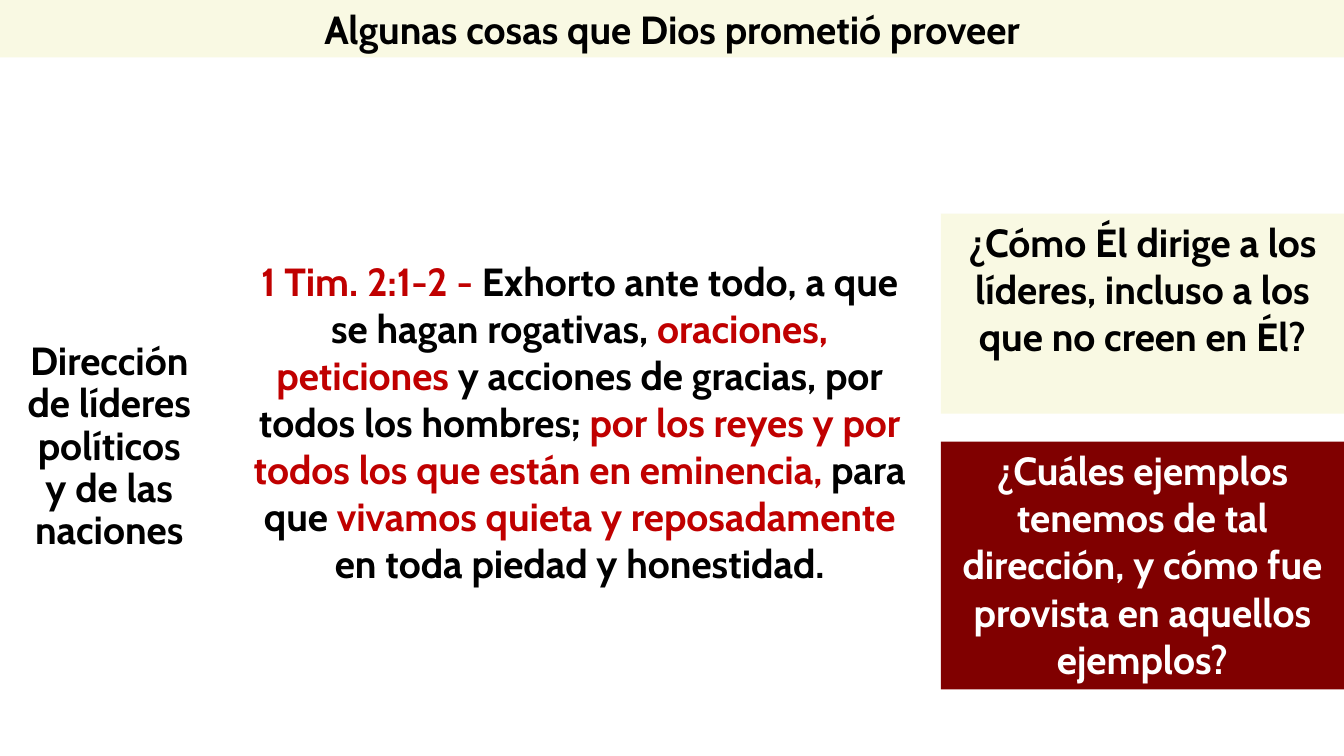
from dataclasses import dataclass

from pptx import Presentation
from pptx.dml.color import RGBColor
from pptx.enum.shapes import MSO_SHAPE
from pptx.enum.text import MSO_ANCHOR, PP_ALIGN
from pptx.util import Pt


@dataclass(frozen=True)
class Theme:
    """Colours, font and type size of the slide."""

    font: str = "Cabin"
    size: int = 28
    ink: str = "000000"
    emphasis: str = "C00000"
    cream: str = "F9F9E3"
    maroon: str = "800000"
    white: str = "FFFFFF"


THEME = Theme()
WIDTH, HEIGHT = 960, 540
SIDE_LEFT, SIDE_WIDTH = 672, 288

TITLE = "Algunas cosas que Dios prometió proveer"
TOPIC = ["Dirección de líderes políticos", "y de las naciones"]
QUESTION = "¿Cómo Él dirige a los líderes, incluso a los que no creen en Él?"
EXAMPLES = (
    "¿Cuáles ejemplos tenemos de tal dirección, "
    "y cómo fue provista en aquellos ejemplos?"
)
VERSE = [
    ("1 Tim. 2:1-2 - ", THEME.emphasis),
    ("Exhorto ante todo, a que se hagan rogativas, ", THEME.ink),
    ("oraciones, peticiones ", THEME.emphasis),
    ("y acciones de gracias, por todos los hombres; ", THEME.ink),
    ("por los reyes y por todos los que están en eminencia, ", THEME.emphasis),
    ("para que ", THEME.ink),
    ("vivamos quieta y reposadamente ", THEME.emphasis),
    ("en toda piedad y honestidad.", THEME.ink),
]


def write(frame, paragraphs, spacing=1.0):
    """Fill a text frame with centred paragraphs of (text, colour) pieces."""
    frame.word_wrap = True
    frame.vertical_anchor = MSO_ANCHOR.TOP
    for index, pieces in enumerate(paragraphs):
        paragraph = frame.add_paragraph() if index else frame.paragraphs[0]
        paragraph.alignment = PP_ALIGN.CENTER
        paragraph.line_spacing = spacing
        for words, colour in pieces:
            run = paragraph.add_run()
            run.text = words
            run.font.name = THEME.font
            run.font.size = Pt(THEME.size)
            run.font.bold = True
            run.font.color.rgb = RGBColor.from_string(colour)


def add_passage(slide, bounds, paragraphs, spacing=1.0):
    """Place unfilled text at the given left, top, width and height."""
    passage = slide.shapes.add_textbox(*map(Pt, bounds))
    write(passage.text_frame, paragraphs, spacing)


def add_panel(slide, bounds, words, fill, colour):
    """Place a filled rectangle holding one centred paragraph."""
    panel = slide.shapes.add_shape(MSO_SHAPE.RECTANGLE, *map(Pt, bounds))
    panel.shadow.inherit = False
    panel.fill.solid()
    panel.fill.fore_color.rgb = RGBColor.from_string(fill)
    panel.line.fill.background()
    write(panel.text_frame, [[(words, colour)]])


def main():
    """Build and save the slide."""
    deck = Presentation()
    deck.slide_width, deck.slide_height = Pt(WIDTH), Pt(HEIGHT)
    slide = deck.slides.add_slide(deck.slide_layouts[6])

    topic = [[(words, THEME.ink)] for words in TOPIC]
    add_passage(slide, (0, 240.5, 156, 160), topic, spacing=0.9)
    add_panel(slide, (SIDE_LEFT, 152.5, SIDE_WIDTH, 143), QUESTION, THEME.cream, THEME.ink)
    add_passage(slide, (174, 180, 480, 312.5), [VERSE])
    add_panel(slide, (SIDE_LEFT, 315.5, SIDE_WIDTH, 177), EXAMPLES, THEME.maroon, THEME.white)
    add_panel(slide, (0, 0, WIDTH, 41), TITLE, THEME.cream, THEME.ink)

    deck.save("out.pptx")


if __name__ == "__main__":
    main()
